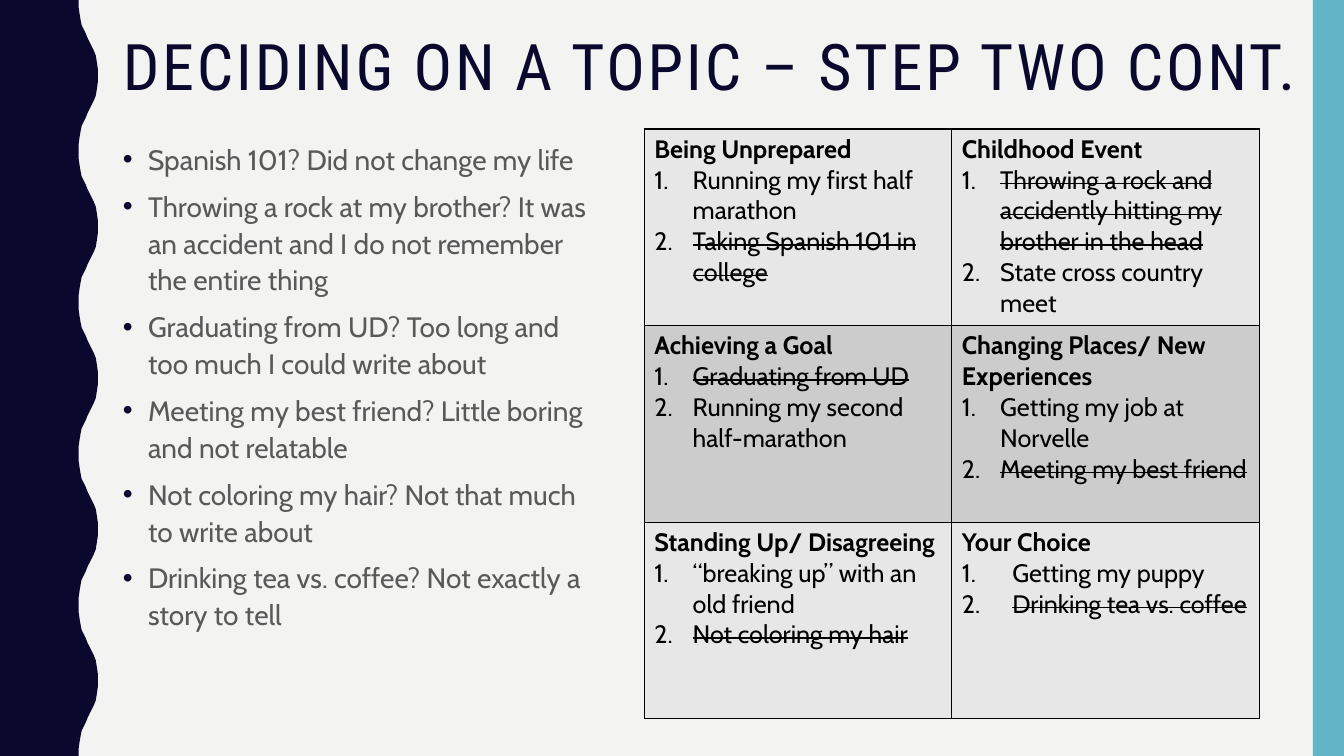
"""Build the slide on choosing a topic, step two."""
import pptx
import pptx.util
import pptx.dml.color
import pptx.enum.shapes
import pptx.enum.text
import pptx.oxml
import pptx.oxml.ns
from lxml import etree

TITLE = "DECIDING ON A TOPIC – STEP TWO CONT."
NOTES = [
    "Spanish 101? Did not change my life",
    "Throwing a rock at my brother? It was an accident and I do not remember the entire thing",
    "Graduating from UD? Too long and too much I could write about",
    "Meeting my best friend? Little boring and not relatable",
    "Not coloring my hair? Not that much to write about",
    "Drinking tea vs. coffee? Not exactly a story to tell",
]
KEEP, DROP = False, True
TOPICS = [
    [("Being Unprepared", 0.38, [("Running my first half marathon", KEEP),
                                 ("Taking Spanish 101 in college", DROP)]),
     ("Childhood Event", 0.38, [("Throwing a rock and accidently hitting my brother in the head", DROP),
                                ("State cross country meet", KEEP)])],
    [("Achieving a Goal", 0.38, [("Graduating from UD", DROP),
                                 ("Running my second half-marathon", KEEP)]),
     ("Changing Places/ New Experiences", 0.38, [("Getting my job at Norvelle", KEEP),
                                                 ("Meeting my best friend", DROP)])],
    [("Standing Up/ Disagreeing", 0.38, [("“breaking up” with an old friend", KEEP),
                                         ("Not coloring my hair", DROP)]),
     ("Your Choice", 0.5, [("Getting my puppy", KEEP),
                           ("Drinking tea vs. coffee", DROP)])],
]
COLORS = {"back": "F3F3F2", "navy": "0B082E", "teal": "62B4C6", "gray": "595959",
          "black": "000000", "light": "E7E7E7", "dark": "CCCCCC"}
WAVE = [(0.78, 0), (0.78, 0.07), (0.79, 0.14), (0.8, 0.2), (0.81, 0.25),
        (0.83, 0.29), (0.85, 0.33), (0.87, 0.38), (0.89, 0.42), (0.91, 0.46),
        (0.93, 0.5), (0.95, 0.55), (0.96, 0.61), (0.97, 0.68), (0.97, 0.75)]
PERIOD = 1.5
WIDE, HIGH = 13.33, 7.5

Inches = pptx.util.Inches
Pt = pptx.util.Pt
qn = pptx.oxml.ns.qn


def color(name):
    return pptx.dml.color.RGBColor.from_string(COLORS[name])


def paint(shape, name):
    shape.shadow.inherit = False
    shape.fill.solid()
    shape.fill.fore_color.rgb = color(name)
    shape.line.fill.background()


def style(para, size, face, name, bold=False):
    font = para.runs[0].font
    font.size, font.name, font.bold = Pt(size), face, bold
    font.color.rgb = color(name)
    return para.runs[0]._r.get_or_add_rPr()


def indent(para, gap):
    props = para._p.get_or_add_pPr()
    props.set("marL", str(Inches(gap)))
    props.set("indent", str(-Inches(gap)))
    return props


def add_text(slide, box, lines):
    frame = slide.shapes.add_textbox(*map(Inches, box)).text_frame
    frame.word_wrap = True
    frame.vertical_anchor = pptx.enum.text.MSO_ANCHOR.TOP
    frame.text = "\n".join(lines)
    return frame.paragraphs


def add_wave(slide):
    bend = WAVE + [(x, PERIOD - y) for x, y in WAVE[-2::-1]]
    edge = [(x, y + turn * PERIOD) for turn in range(5) for x, y in bend]
    points = [(Inches(x), Inches(y)) for x, y in edge + [(0, HIGH)]]
    form = slide.shapes.build_freeform(0, 0)
    form.add_line_segments(points, close=True)
    paint(form.convert_to_shape(), "navy")


def add_notes(slide):
    for para in add_text(slide, (1.12, 1.33, 4.83, 5.8), NOTES):
        style(para, 20, "Cabin", "gray")
        para.line_spacing = 1.1
        para.space_before = Pt(7)
        props = indent(para, 0.25)
        tint = etree.SubElement(props, qn("a:buClr"))
        etree.SubElement(tint, qn("a:srgbClr"), val=COLORS["navy"])
        etree.SubElement(props, qn("a:buFont"), typeface="Arial")
        etree.SubElement(props, qn("a:buChar"), char="•")


def add_border(cell):
    props = cell._tc.get_or_add_tcPr()
    for side in ("a:lnL", "a:lnR", "a:lnT", "a:lnB"):
        line = etree.SubElement(props, qn(side), w=str(Pt(1)))
        fill = etree.SubElement(line, qn("a:solidFill"))
        etree.SubElement(fill, qn("a:srgbClr"), val=COLORS["black"])


def fill_cell(cell, topic, shade):
    head, gap, ideas = topic
    add_border(cell)
    cell.fill.solid()
    cell.fill.fore_color.rgb = color(shade)
    cell.text_frame.text = "\n".join([head] + [idea for idea, _ in ideas])
    first, *rest = cell.text_frame.paragraphs
    style(first, 18, "Cabin", "black", True)
    for para, (_, drop) in zip(rest, ideas):
        run = style(para, 18, "Cabin", "black")
        if drop:
            run.set("strike", "sngStrike")
        props = indent(para, gap)
        etree.SubElement(props, qn("a:buFont"), typeface="+mj-lt")
        etree.SubElement(props, qn("a:buAutoNum"), type="arabicPeriod")


def add_topics(slide):
    rows, cols = len(TOPICS), len(TOPICS[0])
    box = map(Inches, (6.39, 1.28, 3.05 * cols, 1.95 * rows))
    table = slide.shapes.add_table(rows, cols, *box).table
    table.first_row = table.horz_banding = False
    for r, row in enumerate(TOPICS):
        for c, topic in enumerate(row):
            fill_cell(table.cell(r, c), topic, "dark" if r % 2 else "light")


def main():
    deck = pptx.Presentation()
    deck.slide_width, deck.slide_height = Inches(WIDE), Inches(HIGH)
    slide = deck.slides.add_slide(deck.slide_layouts[6])
    slide.background.fill.solid()
    slide.background.fill.fore_color.rgb = color("back")
    add_wave(slide)
    band = slide.shapes.add_shape(pptx.enum.shapes.MSO_SHAPE.RECTANGLE,
                                  *map(Inches, (13.02, 0, 0.31, HIGH)))
    paint(band, "teal")
    title = add_text(slide, (1.12, 0.3, 11.96, 1.15), [TITLE])[0]
    title.line_spacing = 0.9
    style(title, 45.9, "Roboto Condensed", "navy").set("spc", "200")
    add_notes(slide)
    add_topics(slide)
    deck.save("out.pptx")


if __name__ == "__main__":
    main()
